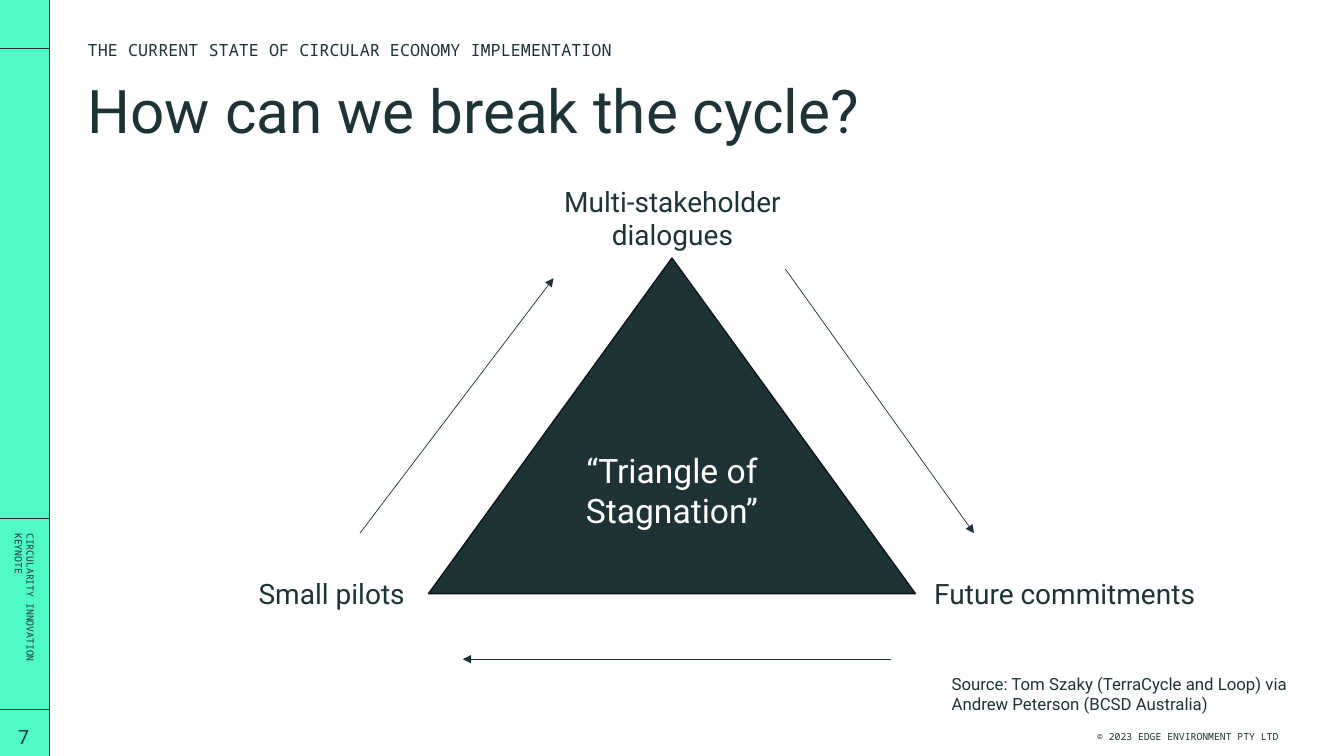
from dataclasses import dataclass

from pptx import Presentation
from pptx.dml.color import RGBColor
from pptx.enum.shapes import MSO_CONNECTOR, MSO_SHAPE
from pptx.enum.text import MSO_ANCHOR, MSO_AUTO_SIZE, PP_ALIGN
from pptx.oxml.ns import qn
from pptx.util import Inches, Pt
from lxml import etree

STRAIGHT = MSO_CONNECTOR.STRAIGHT
RECTANGLE, TRIANGLE = MSO_SHAPE.RECTANGLE, MSO_SHAPE.ISOSCELES_TRIANGLE
TOP, MIDDLE = MSO_ANCHOR.TOP, MSO_ANCHOR.MIDDLE
LEFT, CENTER, RIGHT = PP_ALIGN.LEFT, PP_ALIGN.CENTER, PP_ALIGN.RIGHT
NO_FIT = MSO_AUTO_SIZE.NONE
TITLE_ONLY = 5


@dataclass(frozen=True)
class Theme:
    dark: RGBColor = RGBColor(0x1E, 0x33, 0x36)
    edge: RGBColor = RGBColor(0x0D, 0x16, 0x18)
    mint: RGBColor = RGBColor(0x50, 0xFA, 0xC7)
    white: RGBColor = RGBColor(0xFF, 0xFF, 0xFF)
    sans: str = "Roboto"
    mono: str = "Noto Sans Mono"
    title: float = 43
    centre: float = 24
    label: float = 20
    number: float = 14
    small: float = 12
    tiny: float = 7
    hairline: float = 0.25
    arrow: float = 0.5
    outline: float = 1


THEME = Theme()
PADDING = (0.1, 0.05, 0.1, 0.05)
NO_PADDING = (0, 0, 0, 0)


def set_all(target, values):
    for name, value in values.items():
        setattr(target, name, value)


def write(shape, text, size, font=THEME.sans, color=THEME.dark, align=LEFT,
          anchor=TOP, padding=NO_PADDING, **paragraph_format):
    """Fill a shape with text, one paragraph per line of the string."""
    tf = shape.text_frame
    left, top, right, bottom = (Inches(v) for v in padding)
    set_all(tf, {"word_wrap": True, "auto_size": NO_FIT, "vertical_anchor": anchor,
                 "margin_left": left, "margin_top": top,
                 "margin_right": right, "margin_bottom": bottom})
    tf.text = text
    for p in tf.paragraphs:
        set_all(p, {"alignment": align, **paragraph_format})
        for r in p.runs:
            set_all(r.font, {"name": font, "size": Pt(size)})
            r.font.color.rgb = color


def add_text(s, box, text, size, **text_format):
    shape = s.shapes.add_textbox(*(Inches(v) for v in box))
    write(shape, text, size, **text_format)
    return shape


def add_title(s, box, text):
    title = s.shapes.title
    set_all(title, dict(zip(("left", "top", "width", "height"),
                            (Inches(v) for v in box))))
    write(title, text, THEME.title, line_spacing=0.8)


def add_filled(s, kind, box, fill):
    shape = s.shapes.add_shape(kind, *(Inches(v) for v in box))
    shape.shadow.inherit = False
    shape.fill.solid()
    shape.fill.fore_color.rgb = fill
    shape.line.fill.background()
    return shape


def add_line(s, start, end, width):
    line = s.shapes.add_connector(STRAIGHT, *(Inches(v) for v in (*start, *end)))
    line.line.color.rgb = THEME.dark
    line.line.width = Pt(width)
    etree.SubElement(line._element.spPr, qn("a:effectLst"))
    return line


def add_arrow(s, start, end):
    arrow = add_line(s, start, end, THEME.arrow)
    etree.SubElement(arrow.line._get_or_add_ln(), qn("a:tailEnd"), type="triangle")


def add_sidebar(s):
    width, height = 0.49, 7.5
    add_filled(s, RECTANGLE, (0, 0, width, height), THEME.mint)
    for y in (0.48, 5.14, 7.04):
        add_line(s, (0, y), (width, y), THEME.hairline)
    add_line(s, (width, height), (width, 0), THEME.hairline)
    add_text(s, (0.04, 7.11, 0.39, 0.39), "7", THEME.number,
             align=CENTER, anchor=MIDDLE)
    event = add_text(s, (-0.64, 5.98, 1.77, 0.39), "CIRCULARITY INNOVATION\nKEYNOTE",
                     THEME.tiny, font=THEME.mono, anchor=MIDDLE)
    event.rotation = 90


def add_triangle(s):
    triangle = add_filled(s, TRIANGLE, (4.25, 2.56, 4.83, 3.33), THEME.dark)
    triangle.line.color.rgb = THEME.edge
    triangle.line.width = Pt(THEME.outline)
    write(triangle, "“Triangle of Stagnation”", THEME.centre, color=THEME.white,
          align=CENTER, anchor=MIDDLE, padding=(0.1, 0.05, 0.1, 0.44))


def add_cycle(s):
    add_triangle(s)
    for left, top, height, text in (
            (5.16, 1.78, 0.77, "Multi-stakeholder dialogues"),
            (1.78, 5.67, 0.44, "Small pilots"),
            (9.05, 5.67, 0.44, "Future commitments")):
        add_text(s, (left, top, 3.02, height), text, THEME.label,
                 align=CENTER, padding=PADDING)
    for start, end in (((3.57, 5.29), (5.49, 2.76)),
                       ((7.79, 2.67), (9.66, 5.29)),
                       ((8.84, 6.54), (4.59, 6.54))):
        add_arrow(s, start, end)


def main():
    prs = Presentation()
    prs.slide_width, prs.slide_height = Inches(13.33), Inches(7.5)
    s = prs.slides.add_slide(prs.slide_layouts[TITLE_ONLY])
    add_sidebar(s)
    add_text(s, (0.87, 0.39, 6.08, 0.31),
             "THE CURRENT STATE OF CIRCULAR ECONOMY IMPLEMENTATION",
             THEME.small, font=THEME.mono)
    add_title(s, (0.87, 0.87, 11.81, 1.18), "How can we break the cycle?")
    add_cycle(s)
    add_text(s, (9.34, 6.63, 3.7, 0.5),
             "Source: Tom Szaky (TerraCycle and Loop) via Andrew Peterson (BCSD Australia)",
             THEME.small, padding=PADDING)
    add_text(s, (9.55, 7.11, 3.13, 0.39), "© 2023 EDGE ENVIRONMENT PTY LTD",
             THEME.tiny, font=THEME.mono, align=RIGHT, anchor=MIDDLE)
    prs.save("out.pptx")


if __name__ == "__main__":
    main()
